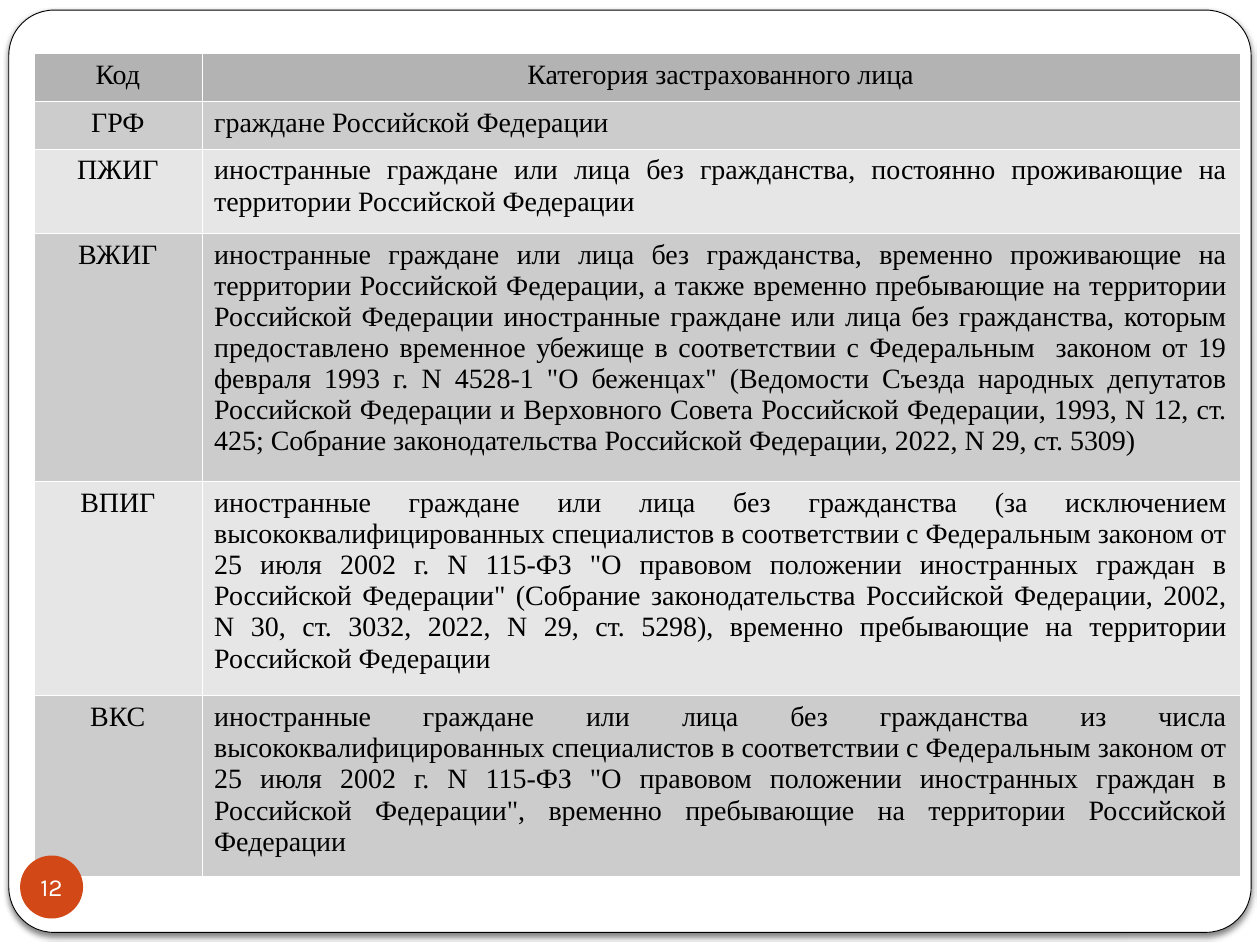
from dataclasses import dataclass

from lxml import etree
from pptx import Presentation
from pptx.dml.color import RGBColor
from pptx.enum.shapes import MSO_SHAPE
from pptx.enum.text import MSO_ANCHOR, PP_ALIGN
from pptx.oxml import parse_xml
from pptx.oxml.ns import nsdecls, qn
from pptx.util import Emu, Inches, Pt

ROUNDED, OVAL = MSO_SHAPE.ROUNDED_RECTANGLE, MSO_SHAPE.OVAL
CENTER, JUSTIFY = PP_ALIGN.CENTER, PP_ALIGN.JUSTIFY
TOP, MIDDLE = MSO_ANCHOR.TOP, MSO_ANCHOR.MIDDLE

WHITE = RGBColor(0xFF, 0xFF, 0xFF)
BLACK = RGBColor(0x00, 0x00, 0x00)
HEADER_GRAY = RGBColor(0xB3, 0xB3, 0xB3)
BAND_GRAYS = (RGBColor(0xCC, 0xCC, 0xCC), RGBColor(0xE6, 0xE6, 0xE6))
ORANGE = RGBColor(0xD3, 0x48, 0x17)

PAGE_WIDTH, PAGE_HEIGHT = Inches(10), Inches(7.5)
GRID_UNIT = PAGE_WIDTH / 100  # the page is a grid of 100 columns by 75 rows
COLUMN_WIDTHS = (13.3, 82.4)
BORDER_WIDTH = Pt(0.06)


@dataclass(frozen=True)
class Area:
    """A place on the page in grid columns and rows."""
    left: float
    top: float
    width: float
    height: float


@dataclass(frozen=True)
class Category:
    """A table row: code, description and height in grid rows."""
    code: str
    description: str
    height: float


HEADER = Category("Код", "Категория застрахованного лица", 3.8)
CATEGORIES = (
    Category("ГРФ", "граждане Российской Федерации", 3.8),
    Category(
        "ПЖИГ",
        "иностранные граждане или лица без гражданства, постоянно проживающие "
        "на территории Российской Федерации", 6.7),
    Category(
        "ВЖИГ",
        "иностранные граждане или лица без гражданства, временно проживающие "
        "на территории Российской Федерации, а также временно пребывающие на "
        "территории Российской Федерации иностранные граждане или лица без "
        "гражданства, которым предоставлено временное убежище в соответствии "
        "с Федеральным  законом от 19 февраля 1993 г. N 4528-1 \"О беженцах\" "
        "(Ведомости Съезда народных депутатов Российской Федерации и "
        "Верховного Совета Российской Федерации, 1993, N 12, ст. 425; "
        "Собрание законодательства Российской Федерации, 2022, N 29, "
        "ст. 5309)", 19.7),
    Category(
        "ВПИГ",
        "иностранные граждане или лица без гражданства (за исключением "
        "высококвалифицированных специалистов в соответствии с Федеральным "
        "законом от 25 июля 2002 г. N 115-ФЗ \"О правовом положении "
        "иностранных граждан в Российской Федерации\" (Собрание "
        "законодательства Российской Федерации, 2002, N 30, ст. 3032, 2022, "
        "N 29, ст. 5298), временно пребывающие на территории Российской "
        "Федерации", 17),
    Category(
        "ВКС",
        "иностранные граждане или лица без гражданства из числа "
        "высококвалифицированных специалистов в соответствии с Федеральным "
        "законом от 25 июля 2002 г. N 115-ФЗ \"О правовом положении "
        "иностранных граждан в Российской Федерации\", временно пребывающие "
        "на территории Российской Федерации", 14.3),
)


def grid(units: float) -> Emu:
    return Emu(round(units * GRID_UNIT))


def place(area: Area) -> tuple[Emu, ...]:
    return tuple(map(grid, (area.left, area.top, area.width, area.height)))


def write(box, text: str, *, font: str = "Times New Roman", size: float = 16,
          color: RGBColor = BLACK, align=CENTER, anchor=TOP) -> None:
    """Put formatted text into a shape or a table cell."""
    box.vertical_anchor = anchor
    para = box.paragraphs[0] if hasattr(box, "paragraphs") else box.text_frame.paragraphs[0]
    para.alignment = align
    span = para.add_run()
    span.text = text
    span.font.name = font
    span.font.size = Pt(size)
    span.font.color.rgb = color


def add_panel(page, kind, area: Area, fill: RGBColor):
    panel = page.shapes.add_shape(kind, *place(area))
    panel.shadow.inherit = False
    panel.fill.solid()
    panel.fill.fore_color.rgb = fill
    panel.line.fill.background()
    return panel


def add_shadow(shape) -> None:
    """Drop a soft half-transparent shadow straight down."""
    effects = shape._element.spPr.find(qn("a:effectLst"))
    effects.append(parse_xml(
        f'<a:outerShdw {nsdecls("a")} blurRad="{Pt(3)}" dist="{Pt(2)}" '
        f'dir="5400000" algn="ctr" rotWithShape="0"><a:srgbClr val="{BLACK}">'
        '<a:alpha val="50000"/></a:srgbClr></a:outerShdw>'))


def add_borders(cell) -> None:
    properties = cell._tc.get_or_add_tcPr()
    for position, side in enumerate(("lnL", "lnR", "lnT", "lnB")):
        border = etree.Element(qn(f"a:{side}"), w=str(BORDER_WIDTH))
        paint = etree.SubElement(border, qn("a:solidFill"))
        etree.SubElement(paint, qn("a:srgbClr"), val=str(WHITE))
        properties.insert(position, border)


def fill_cell(cell, text: str, fill: RGBColor, align) -> None:
    cell.fill.solid()
    cell.fill.fore_color.rgb = fill
    add_borders(cell)
    write(cell, text, align=align)


def add_category_table(page, left: float, top: float) -> None:
    rows = (HEADER, *CATEGORIES)
    area = Area(left, top, sum(COLUMN_WIDTHS), sum(row.height for row in rows))
    table = page.shapes.add_table(len(rows), len(COLUMN_WIDTHS), *place(area)).table
    table.first_row = table.horz_banding = False
    for column, width in zip(table.columns, COLUMN_WIDTHS):
        column.width = grid(width)
    for index, row in enumerate(rows):
        table.rows[index].height = grid(row.height)
        is_header = row is HEADER
        fill = HEADER_GRAY if is_header else BAND_GRAYS[(index - 1) % 2]
        fill_cell(table.cell(index, 0), row.code, fill, CENTER)
        fill_cell(table.cell(index, 1), row.description, fill,
                  CENTER if is_header else JUSTIFY)


def main() -> None:
    deck = Presentation()
    deck.slide_width, deck.slide_height = PAGE_WIDTH, PAGE_HEIGHT
    page = deck.slides.add_slide(deck.slide_layouts[6])

    # Rounded page frame
    frame = add_panel(page, ROUNDED, Area(0.7, 0.8, 98.6, 73.2), WHITE)
    frame.adjustments[0] = 0.049
    frame.line.color.rgb = BLACK
    frame.line.width = Pt(0.5)
    add_shadow(frame)

    # Codes of insured persons
    add_category_table(page, 2.7, 4.2)

    # Page number badge
    badge = add_panel(page, OVAL, Area(1.6, 67.9, 5, 5), ORANGE)
    text_frame = badge.text_frame
    text_frame.margin_left = text_frame.margin_right = 0
    text_frame.margin_top = text_frame.margin_bottom = 0
    write(text_frame, "12", font="Karla", size=14, color=WHITE, anchor=MIDDLE)

    deck.save("out.pptx")


if __name__ == "__main__":
    main()
